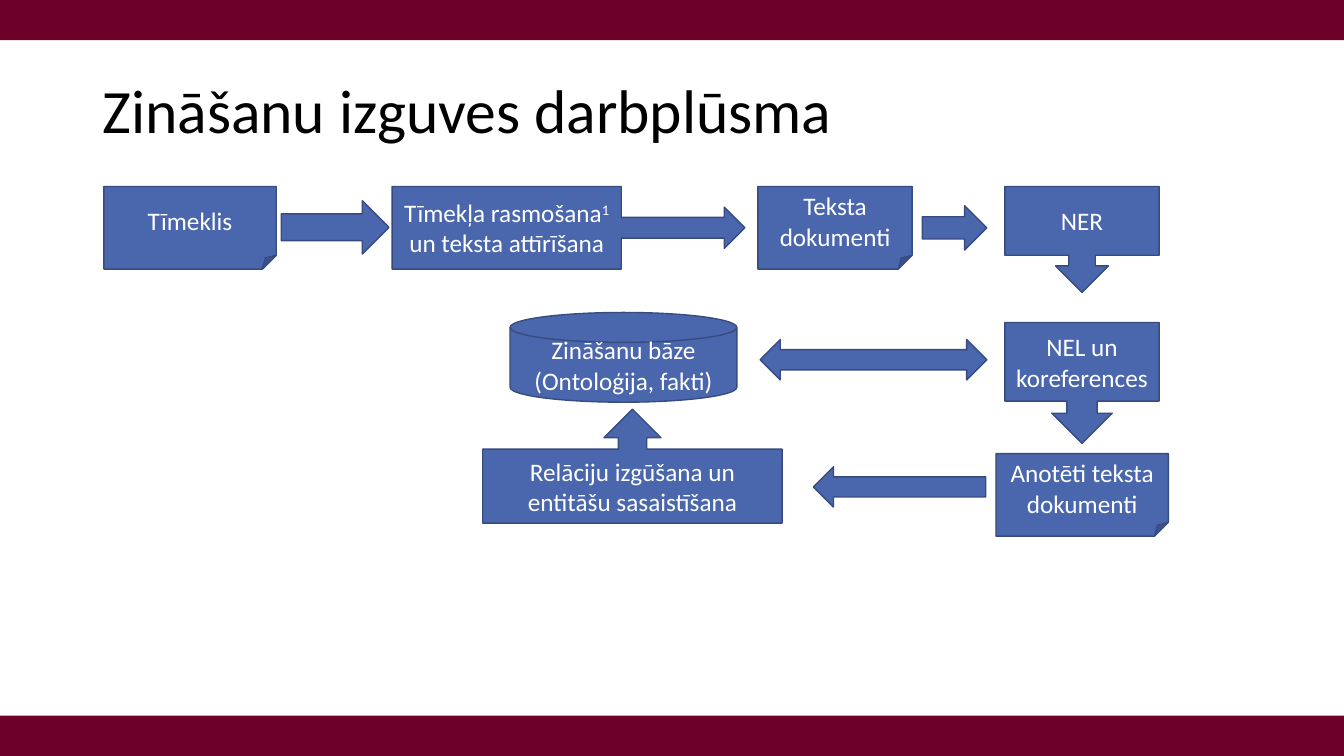
from dataclasses import dataclass

from pptx import Presentation
from pptx.dml.color import RGBColor
from pptx.enum.shapes import MSO_SHAPE as Kind
from pptx.enum.text import MSO_ANCHOR as Anchor, PP_ALIGN as Align
from pptx.util import Pt

PAGE_WIDTH, PAGE_HEIGHT, BAND_HEIGHT = 960, 540, 28.8
MAROON, BLUE, NAVY, WHITE, BLACK = "6D0029", "4A66AC", "374B7F", "FFFFFF", "000000"
ROW_TOP, DOC_HEIGHT = 133.2, 59
NER_LEFT, NER_WIDTH = 717.8, 110.2
WIDE, ARROW_HEIGHT = 123.1, 28.8


@dataclass(frozen=True)
class Step:
    """One workflow shape; a ^ pair in its text encloses a superscript."""
    kind: Kind
    left: float
    top: float
    width: float
    height: float
    lines: tuple[str, ...] = ()
    rotation: float = 0


STEPS = (
    # Top row: from the web to plain text
    Step(Kind.FOLDED_CORNER, 74.2, ROW_TOP, WIDE, DOC_HEIGHT, ("Tīmeklis",)),
    Step(Kind.FOLDED_CORNER, 541.4, ROW_TOP, NER_WIDTH, DOC_HEIGHT, ("Teksta dokumenti",)),
    Step(Kind.RIGHT_ARROW_CALLOUT, 280.1, ROW_TOP, 252, DOC_HEIGHT,
         ("Tīmekļa rasmošana^1 ^un teksta attīrīšana",)),
    Step(Kind.RIGHT_ARROW, 200.9, 143.3, 77, 38.2),
    Step(Kind.DOWN_ARROW, 666, 139.7, 31.7, 46.1, rotation=270),
    # Right column: entity recognition and linking
    Step(Kind.DOWN_ARROW_CALLOUT, NER_LEFT, ROW_TOP, NER_WIDTH, 75.6, ("NER",)),
    Step(Kind.DOWN_ARROW_CALLOUT, NER_LEFT, 230.4, NER_WIDTH, 86.4, ("NEL un koreferences",)),
    Step(Kind.FOLDED_CORNER, 711.4, 324, WIDE, DOC_HEIGHT, ("Anotēti teksta dokumenti",)),
    # Centre: relations and the knowledge base
    Step(Kind.LEFT_ARROW, 581, 333.4, WIDE, ARROW_HEIGHT),
    Step(Kind.UP_ARROW_CALLOUT, 344.9, 292.3, 213.8, 81.4,
         ("Relāciju izgūšana un entitāšu sasaistīšana",)),
    Step(Kind.FLOWCHART_MAGNETIC_DISK, 364.3, 223.2, 162, 64.1,
         ("Zināšanu bāze", "(Ontoloģija, fakti)")),
    Step(Kind.LEFT_RIGHT_ARROW, 542.9, 242.6, 162, ARROW_HEIGHT),
)


def color(code: str) -> RGBColor:
    return RGBColor.from_string(code)


def apply(target, formats: dict) -> None:
    for name, value in formats.items():
        setattr(target, name, value)


def write(box, lines: tuple[str, ...], size: float, ink: str, para_format: dict) -> None:
    frame = box.text_frame
    apply(frame, {"word_wrap": True, "vertical_anchor": Anchor.MIDDLE})
    for number, line in enumerate(lines):
        para = frame.add_paragraph() if number else frame.paragraphs[0]
        apply(para, para_format)
        for index, piece in enumerate(line.split("^")):
            span = para.add_run()
            span.text = piece
            apply(span.font, {"name": "Calibri", "size": Pt(size)})
            span.font.color.rgb = color(ink)
            if index % 2:
                span.font._element.set("baseline", "30000")


def draw(page, step: Step, fill: str, outline: str | None = None) -> None:
    box = page.shapes.add_shape(
        step.kind, Pt(step.left), Pt(step.top), Pt(step.width), Pt(step.height))
    box.shadow.inherit = False
    box.rotation = step.rotation
    box.fill.solid()
    box.fill.fore_color.rgb = color(fill)
    if outline:
        box.line.color.rgb = color(outline)
        box.line.width = Pt(1)
    else:
        box.line.fill.background()
    write(box, step.lines, 18, WHITE, {"alignment": Align.CENTER})


def main() -> None:
    deck = Presentation()
    apply(deck, {"slide_width": Pt(PAGE_WIDTH), "slide_height": Pt(PAGE_HEIGHT)})
    page = deck.slides.add_slide(deck.slide_layouts[6])

    # Bands along the top and bottom edges
    for top in (0, PAGE_HEIGHT - BAND_HEIGHT):
        draw(page, Step(Kind.RECTANGLE, 0, top, PAGE_WIDTH, BAND_HEIGHT), MAROON)

    # Title
    title = page.shapes.add_textbox(Pt(66), Pt(BAND_HEIGHT), Pt(828), Pt(104.4))
    write(title, ("Zināšanu izguves darbplūsma",), 44, BLACK, {"line_spacing": 0.9})

    # Workflow
    for step in STEPS:
        draw(page, step, BLUE, NAVY)

    deck.save("out.pptx")


if __name__ == "__main__":
    main()
